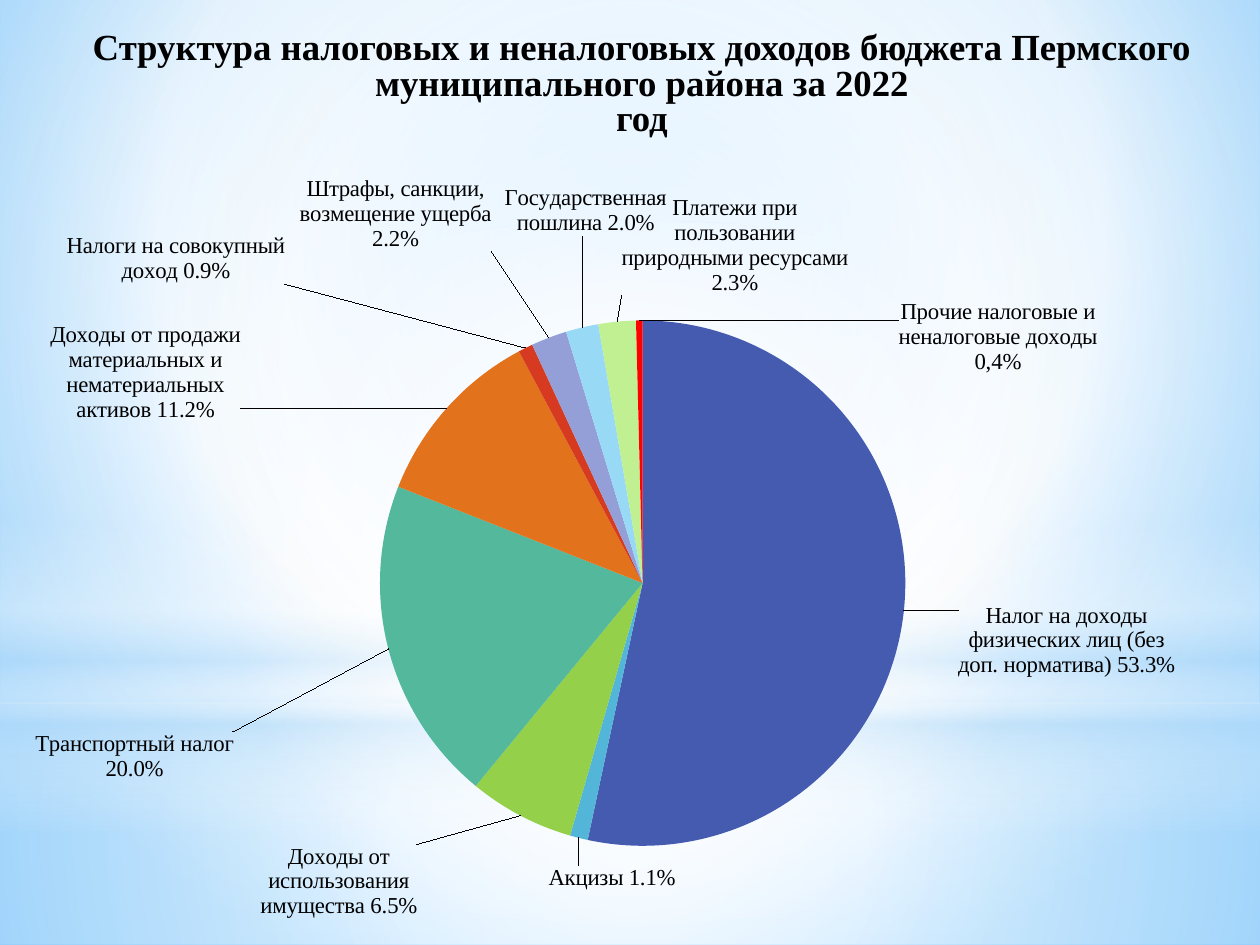
import math
from itertools import accumulate

from lxml import etree
from pptx import Presentation
from pptx.chart.data import CategoryChartData
from pptx.dml.color import RGBColor
from pptx.enum import chart as charts, shapes, text
from pptx.oxml.ns import qn
from pptx.util import Inches, Pt

COLORS = {
    "ink": "000000", "white": "FFFFFF", "mist": "B4DCFA", "sky": "9ED5FF", "azure": "5BB9FF",
    "indigo": "455BB0", "cyan": "53B5D8", "lime": "94D04A", "teal": "53B89C",
    "orange": "E2721C", "brick": "D63A20", "lavender": "949FD7", "ice": "98DAF5",
    "pistachio": "C0F092", "red": "FF0000",
}
FONT = "Times New Roman"
CENTER = (50, 50, 50, 50)

# Category, share, slice colour, label box in inches (left, top, width, height)
INCOME = [
    ("Налог на доходы физических лиц (без доп. норматива)", 0.533, "indigo", (7.6, 4.79, 1.71, 0.59)),
    ("Акцизы", 0.011, "cyan", (4.35, 6.87, 1.01, 0.2)),
    ("Доходы от использования имущества", 0.065, "lime", (2.06, 6.7, 1.25, 0.59)),
    ("Транспортный налог", 0.2, "teal", (0.28, 5.81, 1.57, 0.4)),
    ("Доходы от продажи материальных и нематериальных активов", 0.112, "orange",
     (0.4, 2.57, 1.51, 0.79)),
    ("Налоги на совокупный доход", 0.009, "brick", (0.52, 1.86, 1.74, 0.4)),
    ("Штрафы, санкции, возмещение ущерба", 0.022, "lavender", (2.38, 1.4, 1.52, 0.6)),
    ("Государственная пошлина", 0.02, "ice", (3.99, 1.48, 1.3, 0.4)),
    ("Платежи при пользовании природными ресурсами", 0.023, "pistachio", (4.93, 1.56, 1.8, 0.79)),
    ("Прочие налоговые и неналоговые доходы", 0.004, "red", (7.13, 2.39, 1.58, 0.59)),
]
OTHER_LABEL = "Прочие налоговые и неналоговые доходы 0,4%"
CHART = (0.28, 1.39, 9.37, 5.91)
PLOT = {"x": 0.29, "y": 0.2, "w": 0.45, "h": 0.71}
PIE_CENTER, PIE_RADIUS, LABEL_GAP = (5.1, 4.63), 2.08, 0.06


def sign(value):
    """Side of the pie, with 5 degrees around each axis counted as the middle."""
    return 0 if abs(value) < math.sin(math.radians(5)) else math.copysign(1, value)


def label_shift(middle, box):
    """Offset of a label from its outside-end place, as fractions of the chart."""
    left, top, width, height = box
    angle = 2 * math.pi * middle
    across, up = math.sin(angle), math.cos(angle)
    reach = PIE_RADIUS + LABEL_GAP
    usual_left = PIE_CENTER[0] + reach * across + (sign(across) - 1) / 2 * width
    usual_top = PIE_CENTER[1] - reach * up - (sign(up) + 1) / 2 * height
    return (left - usual_left) / CHART[2], (top - usual_top) / CHART[3]


def add_layout(parent, position, values):
    layout = etree.Element(qn("c:layout"))
    manual = etree.SubElement(layout, qn("c:manualLayout"))
    for name, value in values.items():
        etree.SubElement(manual, qn(f"c:{name}"), val=str(value))
    for old in parent.findall(qn("c:layout")):
        parent.remove(old)
    parent.insert(position, layout)


class Deck:
    def __init__(self):
        self.file = Presentation()
        self.file.slide_width, self.file.slide_height = Inches(10), Inches(7.5)
        self.slide = self.file.slides.add_slide(self.file.slide_layouts[5])

    def gradient(self, fill, owner, stops, focus):
        """Fill with (position, colour, opacity) stops; without a focus, from top to bottom."""
        fill.gradient()
        grad = next(owner.iter(qn("a:gradFill")))
        for child in list(grad):
            grad.remove(child)
        stop_list = etree.SubElement(grad, qn("a:gsLst"))
        for position, color, opacity in stops:
            stop = etree.SubElement(stop_list, qn("a:gs"), pos=str(position * 1000))
            tint = etree.SubElement(stop, qn("a:srgbClr"), val=COLORS[color])
            etree.SubElement(tint, qn("a:alpha"), val=str(opacity * 1000))
        if focus:
            circle = etree.SubElement(grad, qn("a:path"))
            circle.set("path", "circle")
            sides = {side: str(share * 1000) for side, share in zip("ltrb", focus)}
            etree.SubElement(circle, qn("a:fillToRect"), **sides)
        else:
            etree.SubElement(grad, qn("a:lin"), ang="5400000", scaled="0")

    def background(self, stops, focus):
        self.gradient(self.slide.background.fill, self.slide._element, stops, focus)

    def glow(self, kind, box, stops, focus=CENTER):
        glow = self.slide.shapes.add_shape(kind, *map(Inches, box))
        glow.shadow.inherit = False
        glow.line.fill.background()
        self.gradient(glow.fill, glow._element.spPr, stops, focus)

    def style(self, font, size, bold=False):
        font.name, font.size, font.bold = FONT, Pt(size), bold
        font.color.rgb = RGBColor.from_string(COLORS["ink"])

    def title(self, box, lines):
        title = self.slide.shapes.title
        title.left, title.top, title.width, title.height = map(Inches, box)
        self.slide.shapes._spTree.append(title._element)
        frame = title.text_frame
        frame.word_wrap, frame.auto_size = True, text.MSO_AUTO_SIZE.NONE
        frame.vertical_anchor = text.MSO_ANCHOR.MIDDLE
        for number, line in enumerate(lines):
            paragraph = frame.add_paragraph() if number else frame.paragraphs[0]
            paragraph.alignment, paragraph.line_spacing = text.PP_ALIGN.CENTER, 0.8
            run = paragraph.add_run()
            run.text = line
            self.style(run.font, 21, True)

    def pie(self):
        data = CategoryChartData(number_format="0.0%")
        data.categories = [row[0] for row in INCOME]
        shares = [row[1] for row in INCOME]
        data.add_series("Series 1", shares)
        pie = self.slide.shapes.add_chart(
            charts.XL_CHART_TYPE.PIE, *map(Inches, CHART), data).chart
        pie.has_legend = pie.has_title = False
        self.style(pie.font, 13)
        pie.plots[0].vary_by_categories = True
        area = pie._chartSpace.find(".//" + qn("c:plotArea"))
        add_layout(area, 0, {"layoutTarget": "inner", "xMode": "edge", "yMode": "edge",
                             "x": 0.292, "y": 0.195, "w": 0.445, "h": 0.706})

        series = pie.plots[0].series[0]
        labels = series.data_labels
        labels.number_format, labels.number_format_is_linked = "0.0%", False
        labels.show_category_name = labels.show_value = True
        self.style(labels.font, 13)
        for number, (end, row) in enumerate(zip(accumulate(shares), INCOME)):
            self.slice(series.points[number], number, (end - row[1] / 2) / sum(shares), row)

    def slice(self, point, number, middle, row):
        name, share, color, box = row
        point.format.fill.solid()
        point.format.fill.fore_color.rgb = RGBColor.from_string(COLORS[color])
        point.format.line.fill.background()
        label = point.data_label
        if color == "red":
            run = label.text_frame.paragraphs[0].add_run()
            run.text = OTHER_LABEL
            self.style(run.font, 13)
        else:
            self.style(label.font, 13)
        label.position = charts.XL_LABEL_POSITION.OUTSIDE_END
        node = label._dLbl
        node.find(qn("c:showCatName")).set("val", "1")
        etree.SubElement(node, qn("c:separator")).text = " "
        x, y = label_shift(middle, box)
        add_layout(node, 1, {"x": round(x, 4), "y": round(y, 4)})


def main():
    deck = Deck()
    deck.background([(0, "sky", 100), (60, "white", 100), (100, "azure", 100)], (20, 10, 20, 60))
    rectangle, oval = shapes.MSO_SHAPE.RECTANGLE, shapes.MSO_SHAPE.OVAL
    deck.glow(rectangle, (0, 5.58, 10, 1.92),
              [(0, "white", 91), (37, "white", 76), (100, "mist", 79)])
    deck.glow(rectangle, (0, 0, 10, 5.58),
              [(0, "white", 89), (48, "white", 62), (100, "mist", 79)])
    deck.glow(rectangle, (0, 4.12, 10, 2.5),
              [(0, "white", 0), (29, "white", 30), (45, "mist", 40),
               (55, "white", 26), (65, "mist", 60), (100, "white", 0)], None)
    deck.glow(oval, (0, 1.75, 10, 5.58), [(0, "white", 100), (56, "white", 0)])
    deck.title((0.35, 0.21, 9.49, 0.94),
               ["Структура налоговых и неналоговых доходов бюджета Пермского "
                "муниципального района за 2022", "год"])
    deck.pie()
    deck.file.save("out.pptx")


if __name__ == "__main__":
    main()
